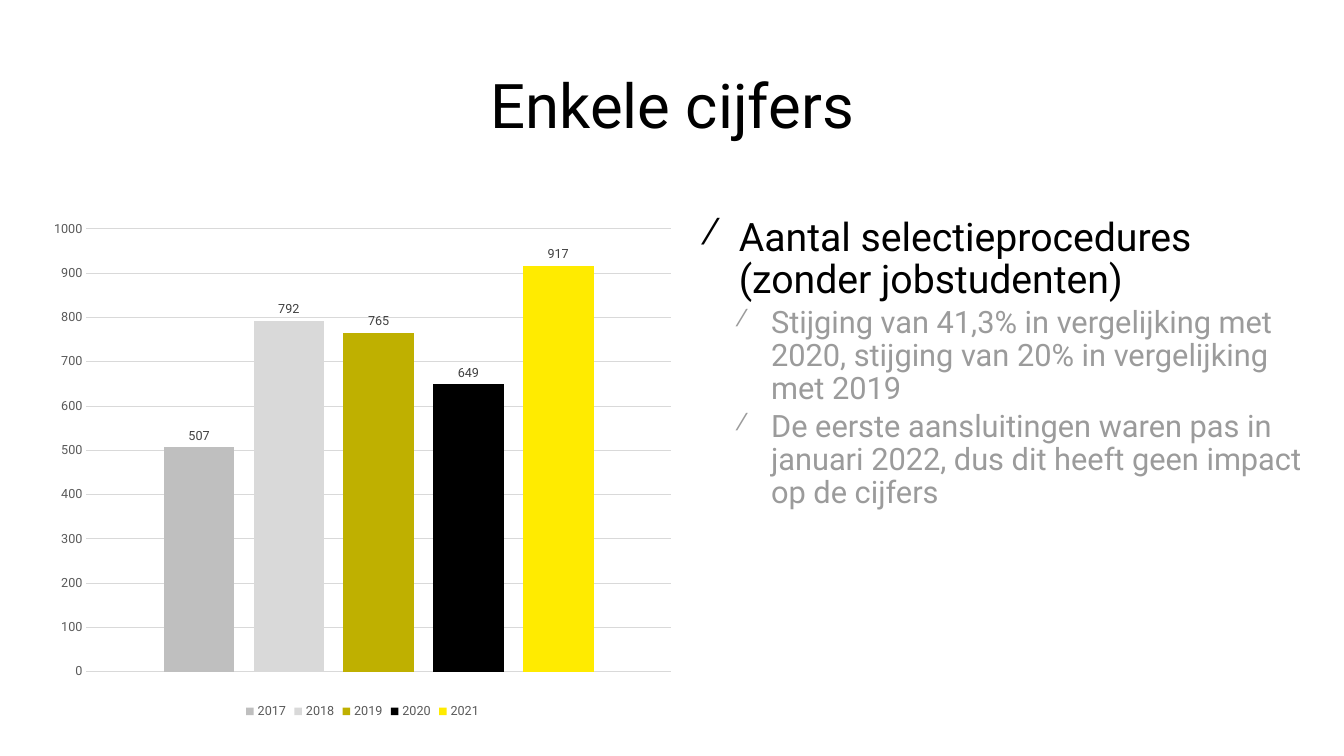
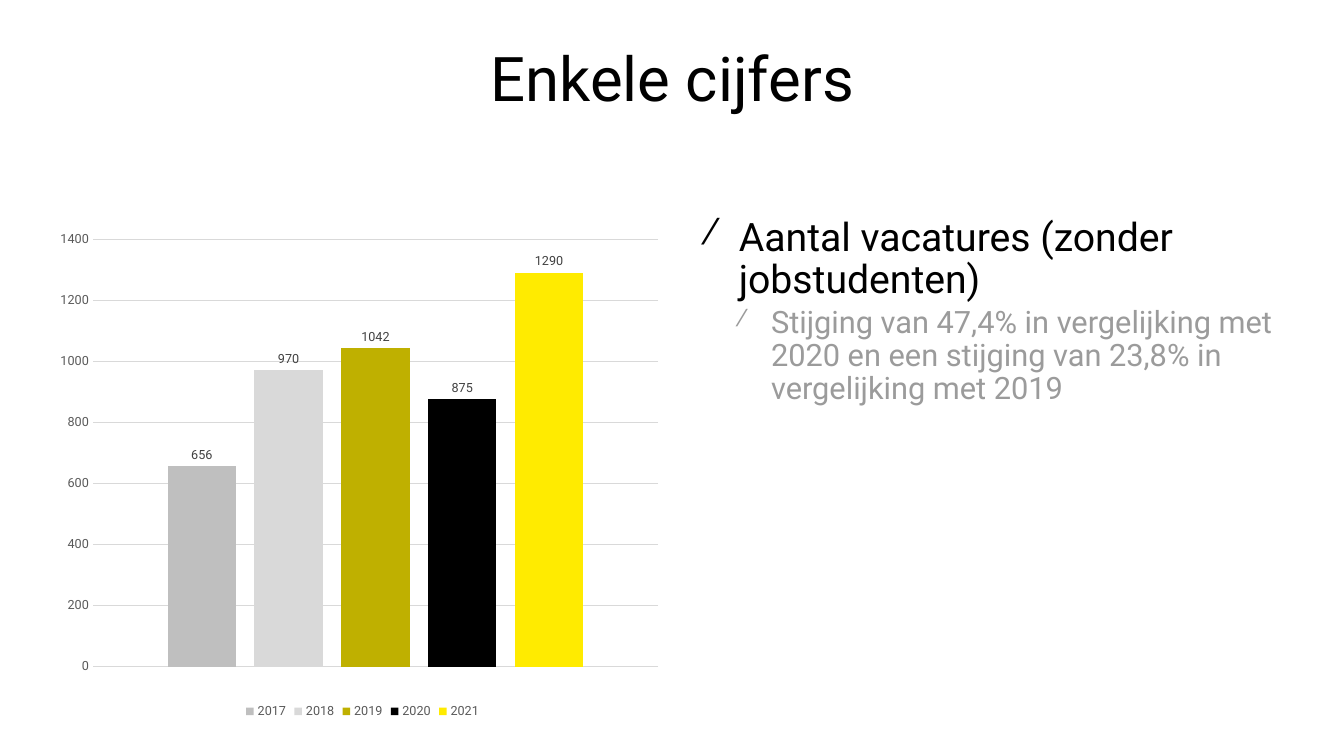
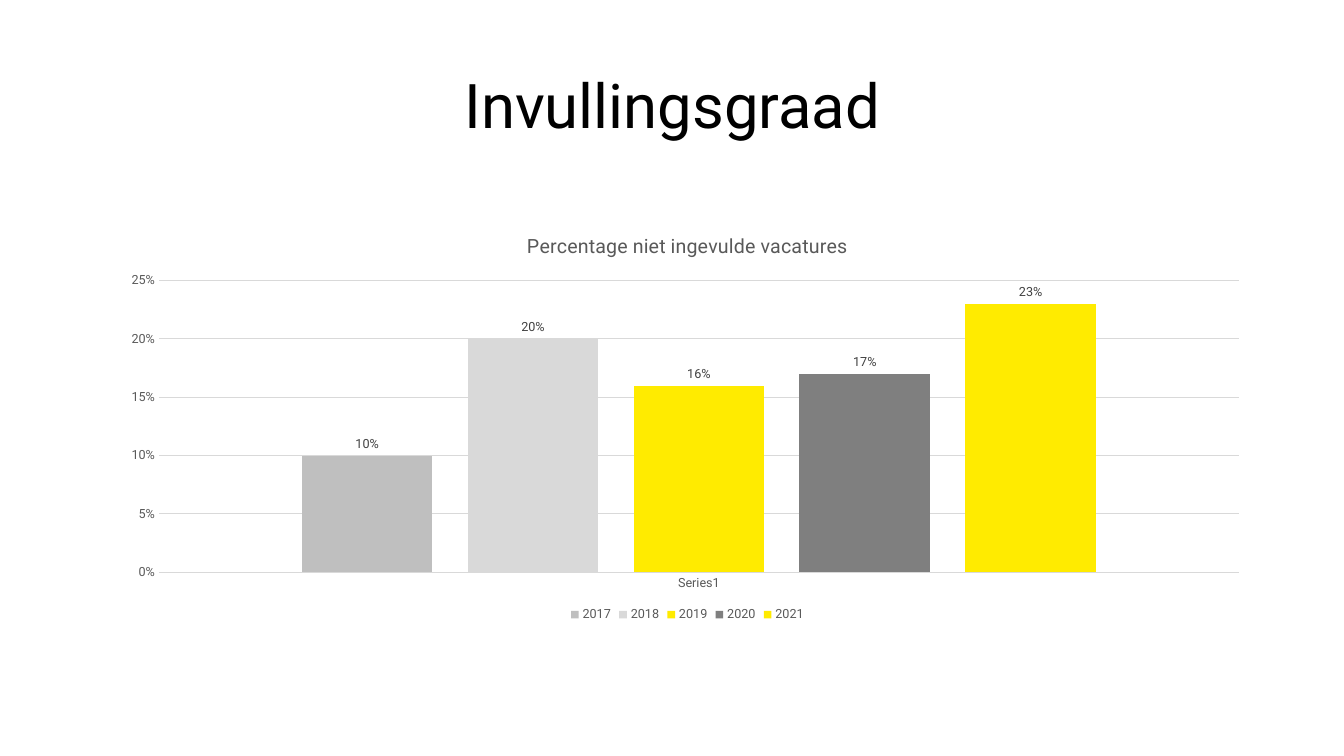
"""Builds three slides with recruitment figures as column charts."""
from dataclasses import dataclass
from typing import Optional

from lxml import etree
from pptx import Presentation
from pptx.chart.data import CategoryChartData
from pptx.dml.color import RGBColor
from pptx.enum.chart import (XL_CHART_TYPE, XL_LABEL_POSITION,
                             XL_LEGEND_POSITION, XL_TICK_MARK)
from pptx.enum.text import MSO_ANCHOR, PP_ALIGN
from pptx.oxml.ns import qn
from pptx.util import Inches, Pt

COLUMNS = XL_CHART_TYPE.COLUMN_CLUSTERED
OUTSIDE = XL_LABEL_POSITION.OUTSIDE_END
BOTTOM = XL_LEGEND_POSITION.BOTTOM
NO_TICK = XL_TICK_MARK.NONE
MIDDLE = MSO_ANCHOR.MIDDLE
TOP = MSO_ANCHOR.TOP
CENTER = PP_ALIGN.CENTER

FONT = "Roboto"
BLACK = RGBColor(0x00, 0x00, 0x00)
GREY = RGBColor(0x9B, 0x9B, 0x9B)
AXIS_TEXT = RGBColor(0x59, 0x59, 0x59)
LABEL_TEXT = RGBColor(0x40, 0x40, 0x40)
GRID = RGBColor(0xD9, 0xD9, 0xD9)
SILVER = RGBColor(0xBF, 0xBF, 0xBF)
MID_GREY = RGBColor(0x7F, 0x7F, 0x7F)
OLIVE = RGBColor(0xBF, 0xB0, 0x00)
YELLOW = RGBColor(0xFF, 0xEB, 0x00)

YEARS = ("2017", "2018", "2019", "2020", "2021")
COUNT_COLORS = (SILVER, GRID, OLIVE, BLACK, YELLOW)
SHARE_COLORS = (SILVER, GRID, YELLOW, MID_GREY, YELLOW)

WIDTH, HEIGHT = Inches(13.33), Inches(7.5)


@dataclass(frozen=True)
class Frame:
    """A rectangle in percent of the slide's width and height."""
    x: float
    y: float
    w: float
    h: float

    def box(self) -> tuple[int, int, int, int]:
        """Return left, top, width and height in EMU."""
        return (int(WIDTH * self.x / 100), int(HEIGHT * self.y / 100),
                int(WIDTH * self.w / 100), int(HEIGHT * self.h / 100))


@dataclass(frozen=True)
class Level:
    """The look of one bullet level."""
    size: int
    color: RGBColor
    margin: float
    bullet_percent: int


@dataclass(frozen=True)
class Columns:
    """A column chart with one series a year; plot is in shares of the chart."""
    frame: Frame
    values: tuple[float, ...]
    colors: tuple[RGBColor, ...]
    maximum: float
    unit: float
    plot: tuple[float, float, float, float]
    number_format: str = "General"
    category: Optional[str] = None
    title: Optional[str] = None


@dataclass(frozen=True)
class Page:
    """One slide: title, chart and bullets given as level and text."""
    title: str
    chart: Columns
    bullets: tuple[tuple[int, str], ...] = ()
    title_top: float = 6.27


LEVELS = (Level(28, BLACK, 0.31, 90), Level(22, GREY, 0.63, 75))
HANGING = 0.31
BODY = Frame(52.65, 28.8, 44.35, 66.8)
LEFT_CHART = Frame(3.08, 28.27, 47.8, 67.33)
WIDE_CHART = Frame(8.4, 28.4, 85.5, 54.4)

PAGES = (
    Page("Enkele cijfers",
         Columns(LEFT_CHART, (507, 792, 765, 649, 917), COUNT_COLORS,
                 1000, 100, (0.07, 0.03, 0.91, 0.87)),
         ((0, "Aantal selectieprocedures (zonder jobstudenten)"),
          (1, "Stijging van 41,3% in vergelijking met 2020, "
              "stijging van 20% in vergelijking met 2019"),
          (1, "De eerste aansluitingen waren pas in januari 2022, "
              "dus dit heeft geen impact op de cijfers"))),
    Page("Enkele cijfers",
         Columns(LEFT_CHART, (656, 970, 1042, 875, 1290), COUNT_COLORS,
                 1400, 200, (0.08, 0.05, 0.88, 0.84)),
         ((0, "Aantal vacatures (zonder jobstudenten)"),
          (1, "Stijging van 47,4% in vergelijking met 2020 "
              "en een stijging van 23,8% in vergelijking met 2019")),
         title_top=2.73),
    Page("Invullingsgraad",
         Columns(WIDE_CHART, (0.1, 0.2, 0.16, 0.17, 0.23), SHARE_COLORS,
                 0.25, 0.05, (0.04, 0.16, 0.94, 0.71), "0%",
                 "Series1", "Percentage niet ingevulde vacatures")),
)


def style(font, size: float, color: RGBColor) -> None:
    """Set typeface, size and colour."""
    font.name, font.size, font.bold = FONT, Pt(size), False
    font.color.rgb = color


def add_text_frame(s, frame: Frame, anchor):
    """Add a wrapping text box without insets."""
    tf = s.shapes.add_textbox(*frame.box()).text_frame
    tf.word_wrap = True
    tf.margin_left = tf.margin_right = tf.margin_top = tf.margin_bottom = 0
    tf.vertical_anchor = anchor
    return tf


def add_title(s, text: str, top: float) -> None:
    """Add the centred slide title."""
    p = add_text_frame(s, Frame(3.08, top, 93.92, 17.73), MIDDLE).paragraphs[0]
    p.text = text
    p.alignment = CENTER
    p.line_spacing = Pt(38)
    style(p.runs[0].font, 44, BLACK)


def add_bullets(s, bullets: tuple[tuple[int, str], ...]) -> None:
    """Add the bulleted text at the right."""
    tf = add_text_frame(s, BODY, TOP)
    for i, (depth, text) in enumerate(bullets):
        level = LEVELS[depth]
        p = tf.add_paragraph() if i else tf.paragraphs[0]
        p.text = text
        p.level = depth
        pPr = p._p.get_or_add_pPr()
        pPr.set("marL", str(Inches(level.margin)))
        pPr.set("indent", str(-Inches(HANGING)))
        etree.SubElement(pPr, qn("a:buSzPct"), val=str(level.bullet_percent * 1000))
        etree.SubElement(pPr, qn("a:buChar"), char="⁄")
        p.line_spacing = 0.9
        p.space_before = Pt(3 if i else 0)
        style(p.runs[0].font, level.size, level.color)


def set_plot_layout(chart, plot: tuple[float, float, float, float]) -> None:
    """Fix the inner plot area."""
    area = chart._chartSpace.chart.plotArea
    for old in area.findall(qn("c:layout")):
        area.remove(old)
    layout = etree.Element(qn("c:layout"))
    manual = etree.SubElement(layout, qn("c:manualLayout"))
    settings = (("layoutTarget", "inner"), ("xMode", "edge"), ("yMode", "edge"),
                *zip("xywh", plot))
    for name, value in settings:
        etree.SubElement(manual, qn(f"c:{name}"), val=str(value))
    area.insert(0, layout)


def style_axes(chart, spec: Columns) -> None:
    """Format the value and category axes."""
    axis = chart.value_axis
    axis.minimum_scale, axis.maximum_scale = 0, spec.maximum
    axis.major_unit = spec.unit
    axis.major_tick_mark = NO_TICK
    axis.format.line.fill.background()
    axis.tick_labels.number_format = spec.number_format
    axis.tick_labels.number_format_is_linked = False
    style(axis.tick_labels.font, 9, AXIS_TEXT)
    axis.has_major_gridlines = True
    cat = chart.category_axis
    cat.visible = spec.category is not None
    cat.major_tick_mark = NO_TICK
    style(cat.tick_labels.font, 9, AXIS_TEXT)
    for line in (axis.major_gridlines.format.line, cat.format.line):
        line.color.rgb = GRID
        line.width = Pt(0.75)


def add_columns(s, spec: Columns) -> None:
    """Add a clustered column chart."""
    data = CategoryChartData(number_format=spec.number_format)
    data.categories = [spec.category or "1"]
    for year, value in zip(YEARS, spec.values):
        data.add_series(year, [value])
    chart = s.shapes.add_chart(COLUMNS, *spec.frame.box(), data).chart
    style(chart.font, 10, BLACK)
    chart.has_title = spec.title is not None
    if spec.title:
        p = chart.chart_title.text_frame.paragraphs[0]
        p.text = spec.title
        style(p.runs[0].font, 14, AXIS_TEXT)
        chart.chart_title.include_in_layout = False
    chart.has_legend = True
    chart.legend.position = BOTTOM
    chart.legend.include_in_layout = False
    style(chart.legend.font, 9, AXIS_TEXT)
    style_axes(chart, spec)
    set_plot_layout(chart, spec.plot)
    plot = chart.plots[0]
    plot.gap_width, plot.overlap, plot.vary_by_categories = 219, -27, False
    for series, color in zip(plot.series, spec.colors):
        series.format.fill.solid()
        series.format.fill.fore_color.rgb = color
        labels = series.data_labels
        labels.show_value = True
        labels.position = OUTSIDE
        labels.number_format = spec.number_format
        labels.number_format_is_linked = False
        style(labels.font, 9, LABEL_TEXT)


def main() -> None:
    """Build and save the presentation."""
    prs = Presentation()
    prs.slide_width, prs.slide_height = WIDTH, HEIGHT
    for page in PAGES:
        s = prs.slides.add_slide(prs.slide_layouts[6])
        add_title(s, page.title, page.title_top)
        if page.bullets:
            add_bullets(s, page.bullets)
        add_columns(s, page.chart)
    prs.save("out.pptx")


if __name__ == "__main__":
    main()
